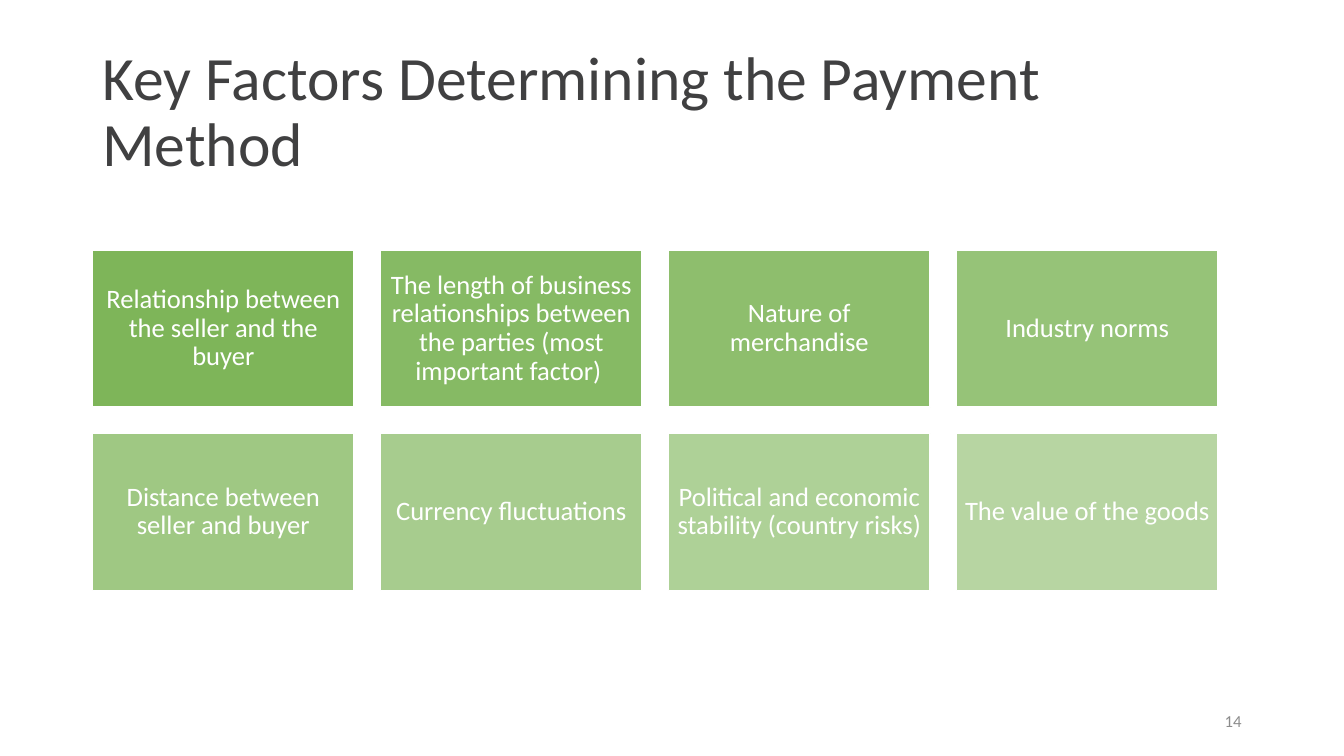
"""Build the slide on key factors determining the payment method."""
from dataclasses import dataclass

from lxml import etree
from pptx import Presentation, util as u
from pptx.dml.color import RGBColor
from pptx.enum import shapes, text
from pptx.oxml.ns import qn


@dataclass(frozen=True)
class Theme:
    """Colours, font and type sizes of the slide."""
    font: str = "Calibri"
    heading: str = "404041"
    muted: str = "8C8C8C"
    green: str = "70AD47"
    white: str = "FFFFFF"
    title_size: int = 44
    factor_size: int = 19
    number_size: int = 12


class FactorSlide:
    """Draw styled elements on one slide, with lengths in points."""

    def __init__(self, slide, theme):
        """Keep the slide and its theme."""
        self.slide = slide
        self.theme = theme

    def set_words(self, frame, words, size, color, align, spacing=1.0):
        """Put one styled run into a text frame."""
        frame.word_wrap = True
        frame.vertical_anchor = text.MSO_ANCHOR.MIDDLE
        line = frame.paragraphs[0]
        line.alignment = align
        line.line_spacing = spacing
        run = line.add_run()
        run.text = words
        run.font.name = self.theme.font
        run.font.size = u.Pt(size)
        run.font.color.rgb = RGBColor.from_string(color)

    def label(self, words, box, size, color, align, spacing=1.0):
        """Add a text box."""
        area = self.slide.shapes.add_textbox(*map(u.Pt, box))
        self.set_words(area.text_frame, words, size, color, align, spacing)

    def tile(self, words, box, opacity):
        """Add a translucent green tile with centred words."""
        theme = self.theme
        tile = self.slide.shapes.add_shape(
            shapes.MSO_SHAPE.RECTANGLE, *map(u.Pt, box))
        tile.shadow.inherit = False
        tile.fill.solid()
        tile.fill.fore_color.rgb = RGBColor.from_string(theme.green)
        color = tile._element.spPr.find(qn("a:solidFill")).find(qn("a:srgbClr"))
        etree.SubElement(color, qn("a:alpha"), val=str(round(opacity * 1000)))
        tile.line.color.rgb = RGBColor.from_string(theme.white)
        tile.line.width = u.Pt(1)
        frame = tile.text_frame
        frame.margin_left = frame.margin_right = u.Pt(5.7)
        frame.margin_top = frame.margin_bottom = u.Pt(5.7)
        self.set_words(frame, words, theme.factor_size, theme.white,
                       text.PP_ALIGN.CENTER, 0.9)


FACTORS = (
    "Relationship between the seller and the buyer",
    "The length of business relationships between the parties "
    "(most important factor) ",
    "Nature of merchandise",
    "Industry norms",
    "Distance between seller and buyer",
    "Currency fluctuations",
    "Political and economic stability (country risks)",
    "The value of the goods",
)


def main():
    """Build and save the slide."""
    deck = Presentation()
    deck.slide_width, deck.slide_height = u.Pt(960), u.Pt(540)
    theme = Theme()
    page = FactorSlide(deck.slides.add_slide(deck.slide_layouts[6]), theme)

    page.label("Key Factors Determining the Payment Method",
               (66, 28.75, 828, 104.4), theme.title_size, theme.heading,
               text.PP_ALIGN.LEFT, 0.9)

    left, top, columns = 66, 178.6, 4
    width, height, gap = 187, 112.2, 18.7
    fade = (90 - 50) / (len(FACTORS) - 1)
    for index, factor in enumerate(FACTORS):
        row, column = divmod(index, columns)
        box = (left + column * (width + gap), top + row * (height + gap),
               width, height)
        page.tile(factor, box, 90 - index * fade)

    page.label("14", (678, 500.5, 216, 28.75), theme.number_size, theme.muted,
               text.PP_ALIGN.RIGHT)
    deck.save("out.pptx")


if __name__ == "__main__":
    main()
